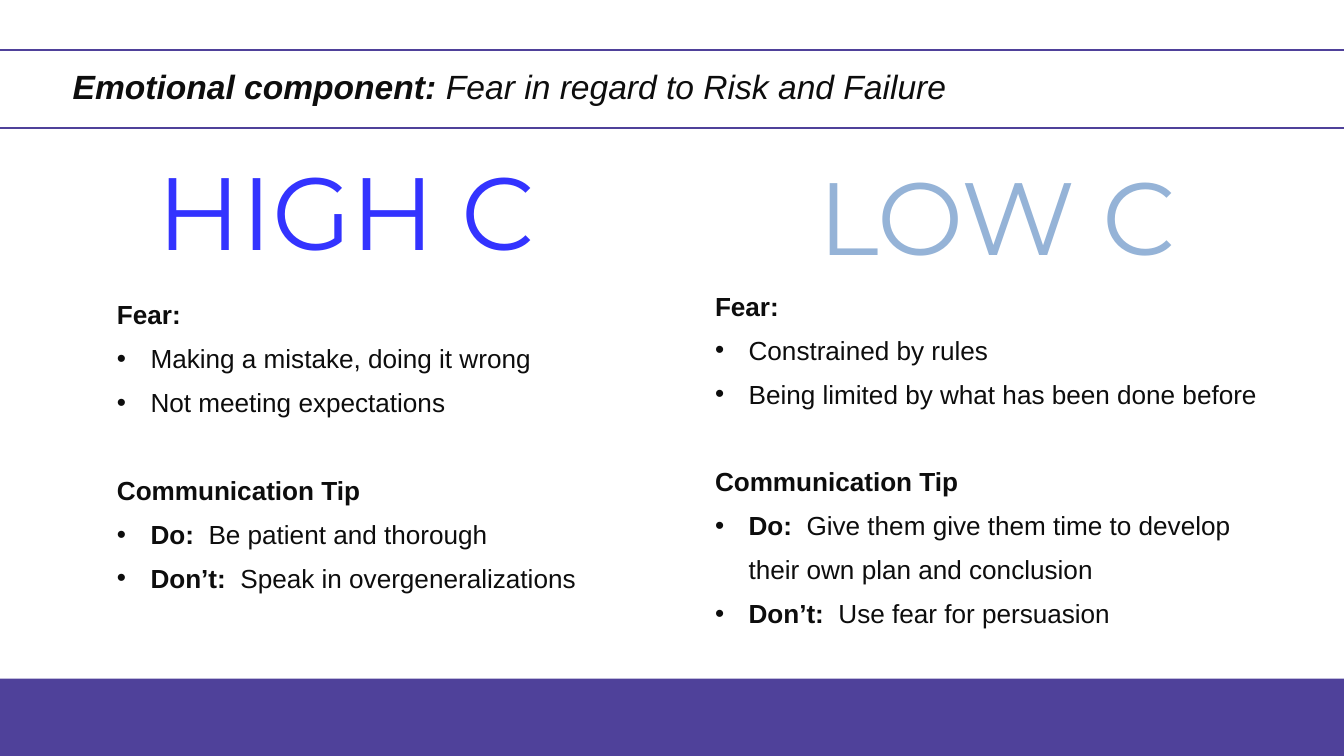
"""Build a slide comparing the fears of high C and low C people."""
from lxml.etree import SubElement
from pptx import Presentation
from pptx.dml.color import RGBColor
from pptx.enum.shapes import MSO_SHAPE as Shape
from pptx.enum.text import MSO_ANCHOR as Anchor, MSO_AUTO_SIZE as AutoSize, PP_ALIGN as Align
from pptx.oxml.ns import qn
from pptx.util import Pt

COLORS = {"purple": "4F419A", "ink": "0D0D0D", "high": "3333FF", "low": "95B3D7"}
COLUMNS = [
    {
        "heading": "HIGH C", "color": "high",
        "heading_area": (134.6, 172.1, 473.8, 120.2),
        "body_area": (125.3, 306.7, 548.6, 326.9),
        "fears": ["Making a mistake, doing it wrong", "Not meeting expectations"],
        "do": "Be patient and thorough",
        "dont": "Speak in overgeneralizations",
    },
    {
        "heading": "LOW C", "color": "low",
        "heading_area": (831.6, 177.1, 473.8, 120.2),
        "body_area": (766.1, 297.4, 605.5, 374.4),
        "fears": ["Constrained by rules", "Being limited by what has been done before"],
        "do": "Give them give them time to develop their own plan and conclusion",
        "dont": "Use fear for persuasion",
    },
]


def color(name):
    """Return the named colour."""
    return RGBColor.from_string(COLORS[name])


def place(box, area):
    """Move a placeholder and clear its insets; return its text frame."""
    box.left, box.top, box.width, box.height = map(Pt, area)
    frame = box.text_frame
    frame.margin_left = frame.margin_top = frame.margin_right = frame.margin_bottom = 0
    frame.vertical_anchor = Anchor.TOP
    frame.word_wrap = True
    frame.auto_size = AutoSize.NONE
    return frame


def add_span(para, text, size, ink="ink", font="Arial", bold=False, italic=False):
    """Add one formatted run."""
    span = para.add_run()
    span.text = text
    span.font.size = Pt(size)
    span.font.name = font
    span.font.bold = bold
    span.font.italic = italic
    span.font.color.rgb = color(ink)


def set_layout(para, spacing, align=Align.LEFT, before=0, bullet=False):
    """Set spacing, alignment and bullet of a paragraph."""
    para.alignment = align
    para.line_spacing = spacing
    para.space_before = Pt(before)
    para.space_after = Pt(0)
    props = para._p.get_or_add_pPr()
    indent = Pt(36) if bullet else 0
    props.set("marL", str(indent))
    props.set("indent", str(-indent))
    if bullet:
        SubElement(props, qn("a:buFont")).set("typeface", "Arial")
        SubElement(props, qn("a:buChar")).set("char", "•")
    else:
        SubElement(props, qn("a:buNone"))


def add_bar(page, area, fill=None, line=None):
    """Add a wide rectangle that is either filled or outlined."""
    bar = page.shapes.add_shape(Shape.RECTANGLE, *map(Pt, area))
    bar.shadow.inherit = False
    if fill:
        bar.fill.solid()
        bar.fill.fore_color.rgb = color(fill)
    else:
        bar.fill.background()
    if line:
        bar.line.color.rgb = color(line)
        bar.line.width = Pt(2.25)
    else:
        bar.line.fill.background()


def fill_title(box):
    """Write the slide title."""
    para = place(box, (77.8, 79.2, 1172.9, 35.3)).paragraphs[0]
    set_layout(para, Pt(35))
    add_span(para, "Emotional component: ", 36, bold=True, italic=True)
    add_span(para, "Fear in regard to Risk and Failure", 36, italic=True)


def fill_heading(box, column):
    """Write the large heading of a column."""
    para = place(box, column["heading_area"]).paragraphs[0]
    set_layout(para, Pt(118.8), Align.CENTER)
    add_span(para, column["heading"], 110, column["color"], "Montserrat")


def fill_body(box, column):
    """Write the fears and communication tips of a column."""
    frame = place(box, column["body_area"])
    rows = [("Fear:", "", 0, False)]
    rows += [("", fear, 0, True) for fear in column["fears"]]
    rows += [
        ("Communication Tip", "", 47, False),
        ("Do:  ", column["do"], 0, True),
        ("Don’t:  ", column["dont"], 0, True),
    ]
    for number, (label, text, before, bullet) in enumerate(rows):
        para = frame.add_paragraph() if number else frame.paragraphs[0]
        set_layout(para, 1.4, before=before, bullet=bullet)
        if label:
            add_span(para, label, 28, bold=True)
        if text:
            add_span(para, text, 28)


def main():
    """Build and save the deck."""
    deck = Presentation()
    deck.slide_width, deck.slide_height = Pt(1440), Pt(810)
    page = deck.slides.add_slide(deck.slide_layouts.get_by_name("Comparison"))
    title, *boxes = page.placeholders
    add_bar(page, (-264.2, 54, 1776.2, 83.5), line="purple")
    add_bar(page, (-300.2, 727.2, 1864.8, 135.4), fill="purple")
    fill_title(title)
    for column, heading, body in zip(COLUMNS, boxes[::2], boxes[1::2]):
        fill_heading(heading, column)
        fill_body(body, column)
    deck.save("out.pptx")


if __name__ == "__main__":
    main()
